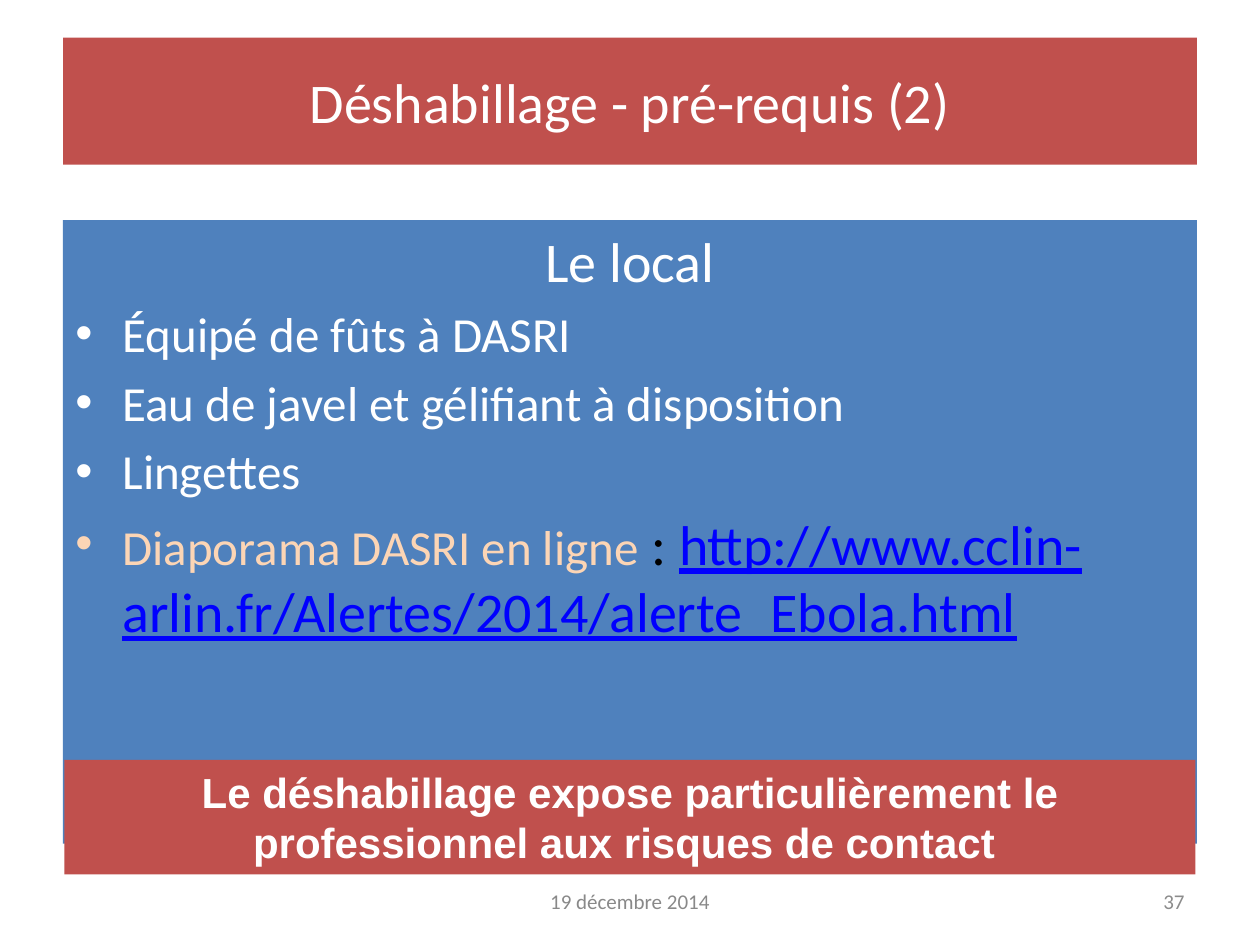
from dataclasses import dataclass

import pptx
import pptx.dml.color
import pptx.enum.shapes
import pptx.enum.text
import pptx.oxml.ns
import pptx.util
from lxml import etree
from pptx.util import Cm, Pt

ALIGN = pptx.enum.text.PP_ALIGN
ANCHOR = pptx.enum.text.MSO_ANCHOR


@dataclass(frozen=True)
class Theme:
    red: str = "C0504D"
    blue: str = "4F81BD"
    white: str = "FFFFFF"
    black: str = "000000"
    peach: str = "FCD5B5"
    link: str = "0000FF"
    date: str = "898989"
    number: str = "8C8C8C"
    font: str = "Calibri"
    warning_font: str = "Arial"
    heading: int = 32
    item: int = 28
    warning: int = 24
    footer: int = 12


THEME = Theme()
LEFT, WIDTH = Cm(1.27), Cm(22.86)
FOOTER_TOP, FOOTER_HEIGHT = Cm(17.65), Cm(1.02)


def set_font(font, size, color, name=THEME.font, bold=False):
    font.size = Pt(size)
    font.name = name
    font.bold = bold
    font.color.rgb = pptx.dml.color.RGBColor.from_string(color)


def fill_box(box, color):
    box.fill.solid()
    box.fill.fore_color.rgb = pptx.dml.color.RGBColor.from_string(color)


def write_line(para, text, align, size, color, **style):
    para.text = text
    para.alignment = align
    set_font(para.font, size, color, **style)


def add_title(page, text):
    title = page.shapes.title
    title.left, title.top, title.width, title.height = LEFT, Cm(0.76), WIDTH, Cm(2.56)
    fill_box(title, THEME.red)
    title.text_frame.vertical_anchor = ANCHOR.MIDDLE
    write_line(title.text_frame.paragraphs[0], text, ALIGN.CENTER, THEME.heading, THEME.white)


def add_bullet(frame):
    """Append an empty bulleted paragraph with a hanging indent."""
    para = frame.add_paragraph()
    para.space_before = Pt(0.2 * THEME.item)
    properties = para._p.get_or_add_pPr()
    properties.set("marL", str(Cm(0.95)))
    properties.set("indent", str(-Cm(0.95)))
    for tag, attribute, value in (("a:buFont", "typeface", "Arial"), ("a:buChar", "char", "•")):
        etree.SubElement(properties, pptx.oxml.ns.qn(tag)).set(attribute, value)
    return para


def add_content(page, heading, items, reference):
    box = page.shapes.add_textbox(LEFT, Cm(4.44), WIDTH, Cm(12.57))
    fill_box(box, THEME.blue)
    frame = box.text_frame
    frame.word_wrap = True
    write_line(frame.paragraphs[0], heading, ALIGN.CENTER, THEME.heading, THEME.white)
    for item in items:
        write_line(add_bullet(frame), item, ALIGN.LEFT, THEME.item, THEME.white)

    para = add_bullet(frame)
    for text, size, color in reference:
        span = para.add_run()
        span.text = text
        set_font(span.font, size, color)
        span.font.underline = color == THEME.link


def add_warning(page, text):
    box = page.shapes.add_shape(
        pptx.enum.shapes.MSO_SHAPE.RECTANGLE, Cm(1.3), Cm(15.32), Cm(22.8), Cm(2.31))
    box.shadow.inherit = False
    box.line.fill.background()
    fill_box(box, THEME.red)
    box.text_frame.word_wrap = True
    box.text_frame.vertical_anchor = ANCHOR.TOP
    write_line(box.text_frame.paragraphs[0], text, ALIGN.CENTER, THEME.warning, THEME.white,
               name=THEME.warning_font, bold=True)


def add_footer(page, text, left, width, align, color):
    box = page.shapes.add_textbox(left, FOOTER_TOP, width, FOOTER_HEIGHT)
    box.text_frame.word_wrap = True
    box.text_frame.vertical_anchor = ANCHOR.MIDDLE
    write_line(box.text_frame.paragraphs[0], text, align, THEME.footer, color)


def main():
    deck = pptx.Presentation()
    deck.slide_width, deck.slide_height = Cm(25.4), Cm(19.05)
    page = deck.slides.add_slide(deck.slide_layouts.get_by_name("Title Only"))

    add_footer(page, "19 décembre 2014", Cm(8.68), Cm(8.04), ALIGN.CENTER, THEME.date)
    add_footer(page, "37", Cm(18.2), Cm(5.93), ALIGN.RIGHT, THEME.number)
    add_title(page, "Déshabillage - pré-requis (2)")
    add_content(
        page,
        "Le local",
        ["Équipé de fûts à DASRI", "Eau de javel et gélifiant à disposition", "Lingettes"],
        [
            ("Diaporama DASRI en ligne", THEME.item, THEME.peach),
            (" : ", THEME.heading, THEME.black),
            ("http://www.cclin-arlin.fr/Alertes/2014/alerte_Ebola.html",
             THEME.heading, THEME.link),
        ],
    )
    add_warning(page, "Le déshabillage expose particulièrement le professionnel "
                      "aux risques de contact ")
    deck.save("out.pptx")


if __name__ == "__main__":
    main()
